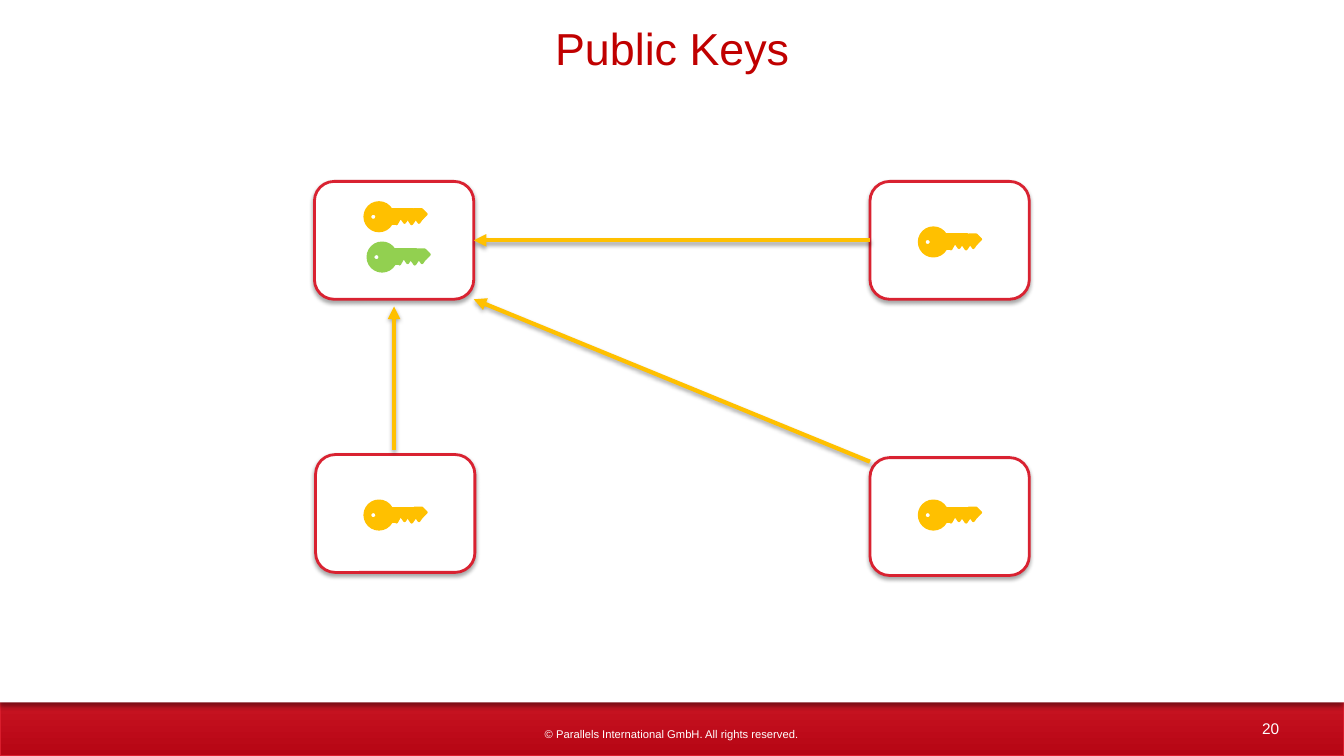
from lxml.etree import SubElement
from pptx import Presentation
from pptx.dml.color import RGBColor
from pptx.enum.shapes import MSO_CONNECTOR as Link, MSO_SHAPE as Form
from pptx.enum.text import MSO_ANCHOR as Anchor, PP_ALIGN as Align
from pptx.oxml.ns import qn
from pptx.util import Pt

WHITE, RED, GOLD, GREEN = "FFFFFF", "D92231", "FFC000", "92D050"
WIDE, HIGH = 960, 540
BOX = (113.8, 84.2)

# form, left, top, width, height, all from the top left of a key
TOOTH = Form.FLOWCHART_MERGE
KEY = [
    (Form.OVAL, 0, 0, 20.2, 20.2),
    (Form.RECTANGLE, 13, 5, 21.6, 6.5),
    (Form.PENTAGON, 35.3, 5, 8.6, 6.5),
    (TOOTH, 36.2, 10.6, 5, 3.6),
    (TOOTH, 31, 11.6, 5, 3.6),
    (TOOTH, 25.9, 10.6, 5, 3.6),
    (TOOTH, 19.4, 9.4, 6.5, 5.8),
    (Form.RECTANGLE, 13, 10.6, 9.4, 4.3),
]
HOLE = (Form.OVAL, 3.6, 7.7, 5, 5)


def rgb(color):
    return RGBColor.from_string(color)


def shade(item, alpha=35, blur=3, dist=1.8):
    """Give a shape or connector a soft shadow straight below it."""
    props = item.element.spPr
    for old in props.findall(qn("a:effectLst")):
        props.remove(old)
    effects = SubElement(props, qn("a:effectLst"))
    outer = SubElement(effects, qn("a:outerShdw"), blurRad=str(Pt(blur)),
                       dist=str(Pt(dist)), dir="5400000", algn="ctr",
                       rotWithShape="0")
    tint = SubElement(outer, qn("a:srgbClr"), val="000000")
    SubElement(tint, qn("a:alpha"), val=str(alpha * 1000))


def draw(shapes, form, left, top, width, height, fill, line=None, weight=2):
    """Add a shape without shadow; no line colour means no outline."""
    item = shapes.add_shape(form, Pt(left), Pt(top), Pt(width), Pt(height))
    item.shadow.inherit = False
    item.fill.solid()
    item.fill.fore_color.rgb = rgb(fill)
    if line:
        item.line.color.rgb = rgb(line)
        item.line.width = Pt(weight)
    else:
        item.line.fill.background()
    return item


def write(item, text, size, color, side=0, edge=0):
    frame = item.text_frame
    frame.text = text
    frame.word_wrap = True
    frame.vertical_anchor = Anchor.MIDDLE
    frame.margin_left = frame.margin_right = Pt(side)
    frame.margin_top = frame.margin_bottom = Pt(edge)
    line = frame.paragraphs[0]
    line.alignment = Align.CENTER
    font = line.runs[0].font
    font.name, font.size, font.color.rgb = "Arial", Pt(size), rgb(color)


def add_frame(shapes, left, top, width, height):
    """Draw the red footer band, the white page over it and the footer text."""
    band = draw(shapes, Form.RECTANGLE, left, top + height - 90, width, 90,
                RED, "D91D2C", 0.75)
    band.fill.gradient()
    band.fill.gradient_angle = 90
    for stop, (place, color) in zip(band.fill.gradient_stops,
                                    [(0, "B60513"), (0.8, RED)]):
        stop.position, stop.color.rgb = place, rgb(color)
    shade(band, 35, 3.1)
    page = draw(shapes, Form.RECTANGLE, left, top, width, height - 38.2, WHITE)
    shade(page, 40, 4, 3)
    base = top + height
    number = shapes.add_textbox(Pt(left + 887.8), Pt(base - 31), Pt(39.6), Pt(22.3))
    write(number, "20", 11, WHITE, 7.2, 3.6)
    rights = shapes.add_textbox(Pt(left + 368.6), Pt(base - 20.2), Pt(222.5), Pt(9.4))
    write(rights, "© Parallels International GmbH. All rights reserved.", 8, WHITE, 7.2)


def add_title(title, left, top, width, height):
    title.left, title.top = Pt(left), Pt(top)
    title.width, title.height = Pt(width), Pt(height)
    write(title, "Public Keys", 32, "C00000")
    title.element.getparent().append(title.element)


def add_key(shapes, left, top, color):
    group = shapes.add_group_shape()
    for form, x, y, width, height in KEY:
        draw(group.shapes, form, left + x, top + y, width, height, color, color)
    form, x, y, width, height = HOLE
    draw(group.shapes, form, left + x, top + y, width, height, WHITE, color)


def add_holder(shapes, left, top, keys):
    """Draw a rounded box with keys at (x, y, colour) inside it."""
    box = draw(shapes, Form.ROUNDED_RECTANGLE, left, top, *BOX, WHITE, RED)
    shade(box)
    for x, y, color in keys:
        add_key(shapes, left + x, top + y, color)
    return box


def add_arrow(shapes, x1, y1, x2, y2):
    arrow = shapes.add_connector(Link.STRAIGHT, Pt(x1), Pt(y1), Pt(x2), Pt(y2))
    arrow.line.color.rgb = rgb(GOLD)
    arrow.line.width = Pt(3)
    SubElement(arrow.line._get_or_add_ln(), qn("a:tailEnd"), type="triangle")
    shade(arrow)
    return arrow


def add_map(shapes, left, top):
    """Place four key holders and the arrows to the first of them."""
    wide, high = BOX
    right = left + 396.8
    hub = add_holder(shapes, left, top, [(38.2, 43.9, GREEN), (36, 15.1, GOLD)])
    east = add_holder(shapes, right, top, [(35.2, 33.1, GOLD)])
    add_holder(shapes, left + 0.8, top + 195.1, [(35.2, 33.1, GOLD)])
    add_holder(shapes, right, top + 197.3, [(35.2, 30.9, GOLD)])
    level = top + high / 2
    across = add_arrow(shapes, right, level, left + wide, level)
    across.begin_connect(east, 1)
    across.end_connect(hub, 3)
    middle = left + wide / 2
    add_arrow(shapes, middle, top + 191.5, middle, top + 89.3)
    add_arrow(shapes, right, top + 200.2, left + wide, top + high)


def main():
    deck = Presentation()
    deck.slide_width, deck.slide_height = Pt(WIDE), Pt(HIGH)
    slide = deck.slides.add_slide(deck.slide_layouts[5])
    add_frame(slide.shapes, 0, 0, WIDE, HIGH)
    add_title(slide.shapes.title, 143.3, 14.4, 673.9, 38.9)
    add_map(slide.shapes, 224.6, 129.6)
    deck.save("out.pptx")


if __name__ == "__main__":
    main()
